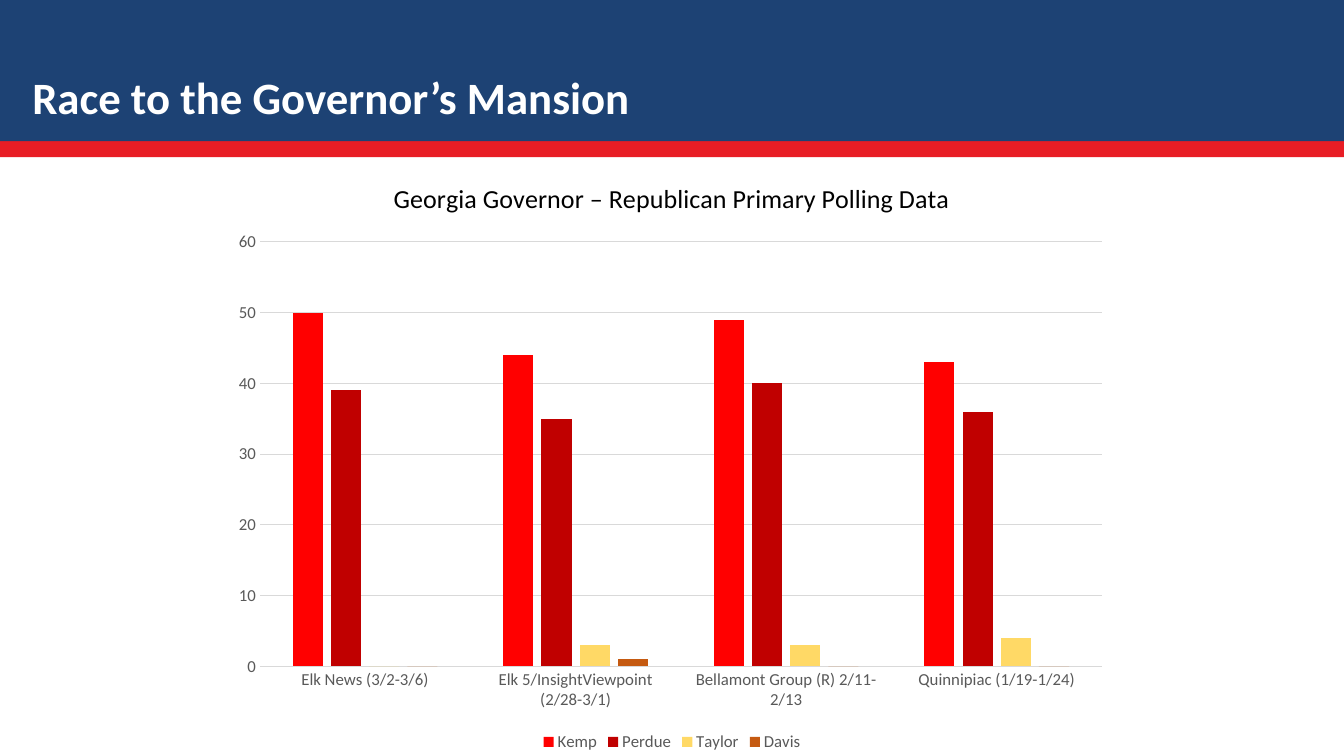
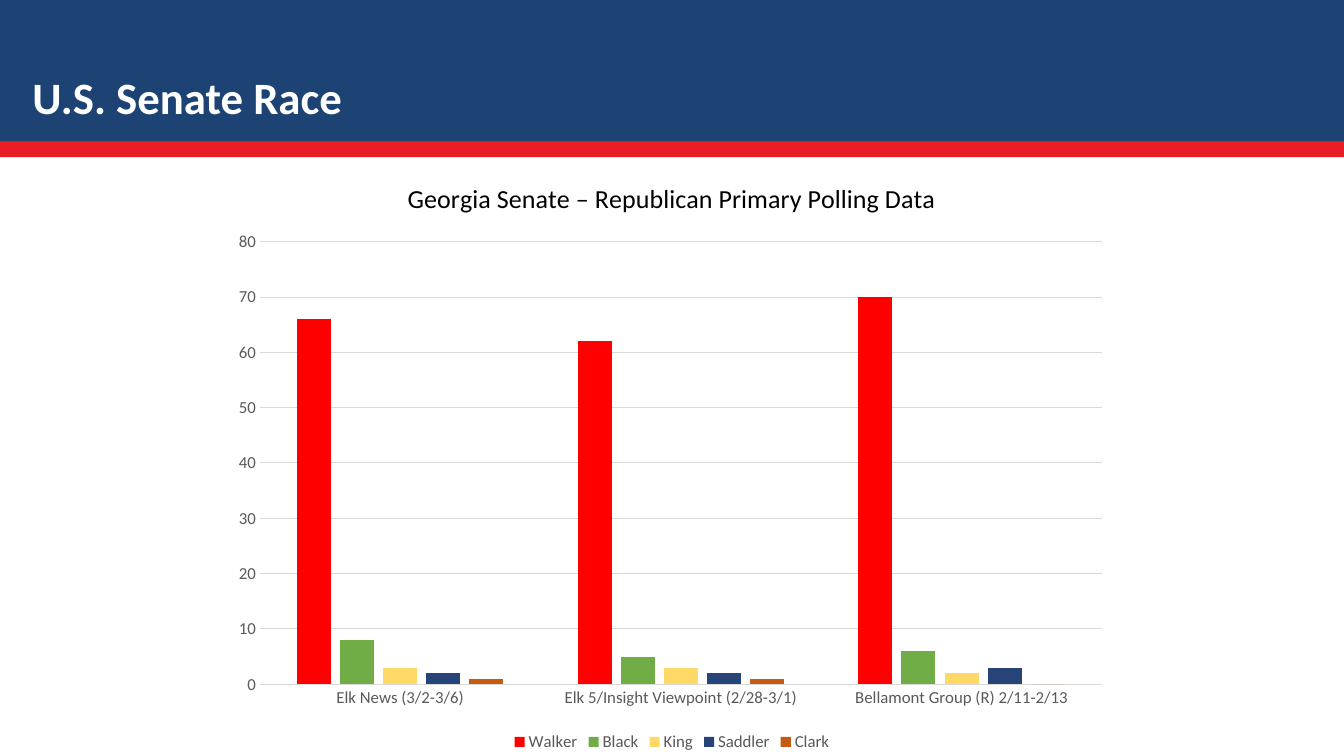
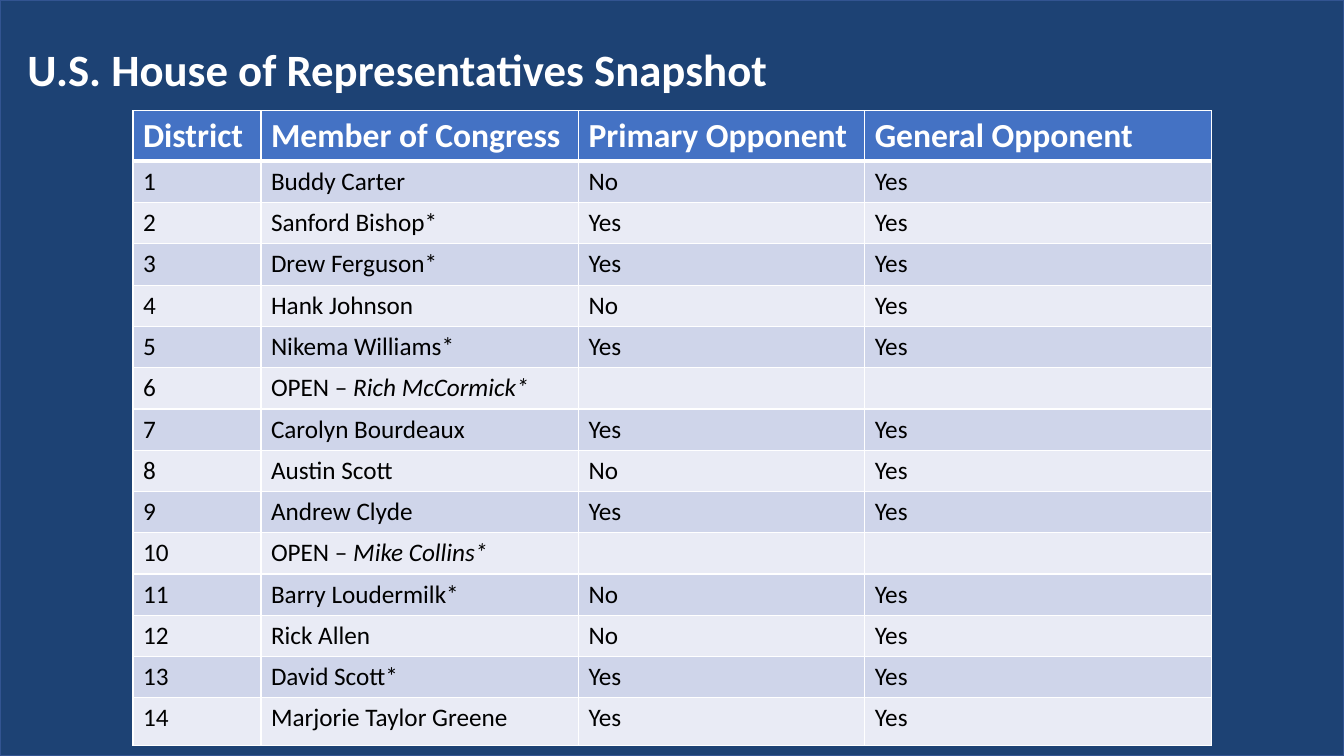
from dataclasses import dataclass

from lxml import etree
from pptx import Presentation
from pptx.chart import data as cd
from pptx.dml.color import RGBColor
from pptx.enum import chart as ch, shapes, text
from pptx.oxml import parse_xml
from pptx.oxml.ns import nsdecls, qn
from pptx.util import Pt

NAVY = RGBColor(0x1D, 0x42, 0x74)
NAVY_EDGE = RGBColor(0x32, 0x54, 0x91)
BAND_RED = RGBColor(0xE8, 0x1D, 0x25)
WHITE = RGBColor(0xFF, 0xFF, 0xFF)
BLACK = RGBColor(0, 0, 0)
GREY = RGBColor(0x59, 0x59, 0x59)
GRID = RGBColor(0xD9, 0xD9, 0xD9)
RED = RGBColor(0xFF, 0, 0)
DARK_RED = RGBColor(0xC0, 0, 0)
YELLOW = RGBColor(0xFF, 0xD9, 0x66)
ORANGE = RGBColor(0xC5, 0x5A, 0x11)
GREEN = RGBColor(0x70, 0xAD, 0x47)
BLUE = RGBColor(0x26, 0x44, 0x78)
HEADER = RGBColor(0x44, 0x72, 0xC4)
STRIPES = (RGBColor(0xCF, 0xD5, 0xEA), RGBColor(0xE9, 0xEB, 0xF5))

FONT = "Calibri"
WIDTH, HEIGHT, BAND = 960, 540, 100.8


@dataclass(frozen=True)
class Candidate:
    name: str
    color: RGBColor
    polls: tuple[int, ...]


@dataclass(frozen=True)
class Race:
    title: str
    chart_title: str
    pollsters: tuple[str, ...]
    candidates: tuple[Candidate, ...]
    top: int
    plot_height: float


@dataclass(frozen=True)
class District:
    member: str
    primary: str = "Yes"
    general: str = "Yes"
    nominee: str = ""


RACES = (
    Race(
        "Race to the Governor’s Mansion",
        "Georgia Governor – Republican Primary Polling Data",
        ("Elk News (3/2-3/6)", "Elk 5/InsightViewpoint (2/28-3/1)",
         "Bellamont Group (R) 2/11-2/13", "Quinnipiac (1/19-1/24)"),
        (
            Candidate("Kemp", RED, (50, 44, 49, 43)),
            Candidate("Perdue", DARK_RED, (39, 35, 40, 36)),
            Candidate("Taylor", YELLOW, (0, 3, 3, 4)),
            Candidate("Davis", ORANGE, (0, 1, 0, 0)),
        ),
        60, 0.71,
    ),
    Race(
        "U.S. Senate Race",
        "Georgia Senate – Republican Primary Polling Data",
        ("Elk News (3/2-3/6)", "Elk 5/Insight Viewpoint (2/28-3/1)",
         "Bellamont Group (R) 2/11-2/13"),
        (
            Candidate("Walker", RED, (66, 62, 70)),
            Candidate("Black", GREEN, (8, 5, 6)),
            Candidate("King", YELLOW, (3, 3, 2)),
            Candidate("Saddler", BLUE, (2, 2, 3)),
            Candidate("Clark", ORANGE, (1, 1, 0)),
        ),
        80, 0.74,
    ),
)

COLUMNS = (
    ("District", 91.4),
    ("Member of Congress", 226.8),
    ("Primary Opponent", 204.5),
    ("General Opponent", 247.7),
)
DISTRICTS = (
    District("Buddy Carter", "No"),
    District("Sanford Bishop*"),
    District("Drew Ferguson*"),
    District("Hank Johnson", "No"),
    District("Nikema Williams*"),
    District("OPEN – ", "", "", "Rich McCormick*"),
    District("Carolyn Bourdeaux"),
    District("Austin Scott", "No"),
    District("Andrew Clyde"),
    District("OPEN – ", "", "", "Mike Collins*"),
    District("Barry Loudermilk*", "No"),
    District("Rick Allen", "No"),
    District("David Scott*"),
    District("Marjorie Taylor Greene"),
)
HEADER_ROW, BODY_ROW, LAST_ROW = 36, 29.5, 33.8


def style_font(font, size: float, color: RGBColor, bold: bool = False) -> None:
    font.name = FONT
    font.size = Pt(size)
    font.bold = bold
    font.color.rgb = color


def add_band(s, top: float, height: float, color: RGBColor, edge: RGBColor | None = None) -> None:
    sp = s.shapes.add_shape(shapes.MSO_SHAPE.RECTANGLE, 0, Pt(top), Pt(WIDTH), Pt(height))
    sp.shadow.inherit = False
    sp.fill.solid()
    sp.fill.fore_color.rgb = color
    if edge is None:
        sp.line.fill.background()
    else:
        sp.line.color.rgb = edge
        sp.line.width = Pt(1)


def add_title(s, title: str, left: float, top: float) -> None:
    sp = s.shapes.add_textbox(Pt(left), Pt(top), Pt(600), Pt(46))
    tf = sp.text_frame
    tf.word_wrap = True
    tf.auto_size = text.MSO_AUTO_SIZE.SHAPE_TO_FIT_TEXT
    p = tf.paragraphs[0]
    p.text = title
    style_font(p.font, 32, WHITE, True)


def set_plot_layout(chart, height: float) -> None:
    area = chart._chartSpace.chart.plotArea
    for old in area.findall(qn("c:layout")):
        area.remove(old)
    layout = parse_xml(f"<c:layout {nsdecls('c')}><c:manualLayout/></c:layout>")
    values = (("layoutTarget", "inner"), ("xMode", "edge"), ("yMode", "edge"),
              ("x", 0.04), ("y", 0.14), ("w", 0.94), ("h", height))
    for tag, value in values:
        etree.SubElement(layout[0], qn(f"c:{tag}")).set("val", str(value))
    area.insert(0, layout)


def add_poll_chart(s, race: Race) -> None:
    polls = cd.CategoryChartData(number_format="General")
    polls.categories = race.pollsters
    for c in race.candidates:
        polls.add_series(c.name, c.polls)
    chart = s.shapes.add_chart(ch.XL_CHART_TYPE.COLUMN_CLUSTERED,
                               Pt(160), Pt(113), Pt(640), Pt(427), polls).chart
    style_font(chart.font, 10, BLACK)

    chart.has_title = True
    p = chart.chart_title.text_frame.paragraphs[0]
    p.text = race.chart_title
    style_font(p.font, 18.6, BLACK)
    chart.chart_title.include_in_layout = False

    chart.has_legend = True
    chart.legend.position = ch.XL_LEGEND_POSITION.BOTTOM
    chart.legend.include_in_layout = False
    style_font(chart.legend.font, 12, GREY)

    for axis in (chart.category_axis, chart.value_axis):
        axis.major_tick_mark = axis.minor_tick_mark = ch.XL_TICK_MARK.NONE
        style_font(axis.tick_labels.font, 12, GREY)
    values = chart.value_axis
    values.minimum_scale, values.maximum_scale, values.major_unit = 0, race.top, 10
    values.format.line.fill.background()
    for line in (chart.category_axis.format.line, values.major_gridlines.format.line):
        line.color.rgb = GRID
        line.width = Pt(0.75)

    plot = chart.plots[0]
    plot.vary_by_categories = False
    plot.gap_width, plot.overlap = 219, -27
    for series, c in zip(plot.series, race.candidates):
        series.format.fill.solid()
        series.format.fill.fore_color.rgb = c.color
    set_plot_layout(chart, race.plot_height)


def set_borders(cell, top: float, bottom: float) -> None:
    tc_pr = cell._tc.get_or_add_tcPr()
    for side, width in (("L", 1), ("R", 1), ("T", top), ("B", bottom)):
        tc_pr.append(parse_xml(
            f'<a:ln{side} {nsdecls("a")} w="{Pt(width)}"><a:solidFill>'
            f'<a:srgbClr val="{WHITE}"/></a:solidFill></a:ln{side}>'))


def fill_cell(cell, words: str, row: int, italic: str = "") -> None:
    is_header = row == 0
    set_borders(cell, 3 if row == 1 else 1, 3 if is_header else 1)
    cell.fill.solid()
    cell.fill.fore_color.rgb = HEADER if is_header else STRIPES[(row - 1) % 2]
    p = cell.text_frame.paragraphs[0]
    if words:
        p.text = words
    if italic:
        r = p.add_run()
        r.text = italic
        r.font.italic = True
    style_font(p.font, 24 if is_header else 18, WHITE if is_header else BLACK, is_header)


def add_district_table(s) -> None:
    heights = [HEADER_ROW] + [BODY_ROW] * (len(DISTRICTS) - 1) + [LAST_ROW]
    tbl = s.shapes.add_table(len(heights), len(COLUMNS), Pt(95), Pt(79.2),
                             Pt(sum(w for _, w in COLUMNS)), Pt(sum(heights))).table
    for row, height in zip(tbl.rows, heights):
        row.height = Pt(height)
    for col, (name, width) in enumerate(COLUMNS):
        tbl.columns[col].width = Pt(width)
        fill_cell(tbl.cell(0, col), name, 0)
    for row, d in enumerate(DISTRICTS, 1):
        for col, words in enumerate((str(row), d.member, d.primary, d.general)):
            fill_cell(tbl.cell(row, col), words, row, d.nominee if col == 1 else "")


def main() -> None:
    prs = Presentation()
    prs.slide_width, prs.slide_height = Pt(WIDTH), Pt(HEIGHT)
    blank = prs.slide_layouts[6]

    for race in RACES:
        s = prs.slides.add_slide(blank)
        add_band(s, 11.5, BAND, BAND_RED)
        add_band(s, 0, BAND, NAVY)
        add_title(s, race.title, 16, 46)
        add_poll_chart(s, race)

    s = prs.slides.add_slide(blank)
    add_band(s, 0, HEIGHT, NAVY, NAVY_EDGE)
    add_district_table(s)
    add_title(s, "U.S. House of Representatives Snapshot", 12.5, 26.5)

    prs.save("out.pptx")


if __name__ == "__main__":
    main()
